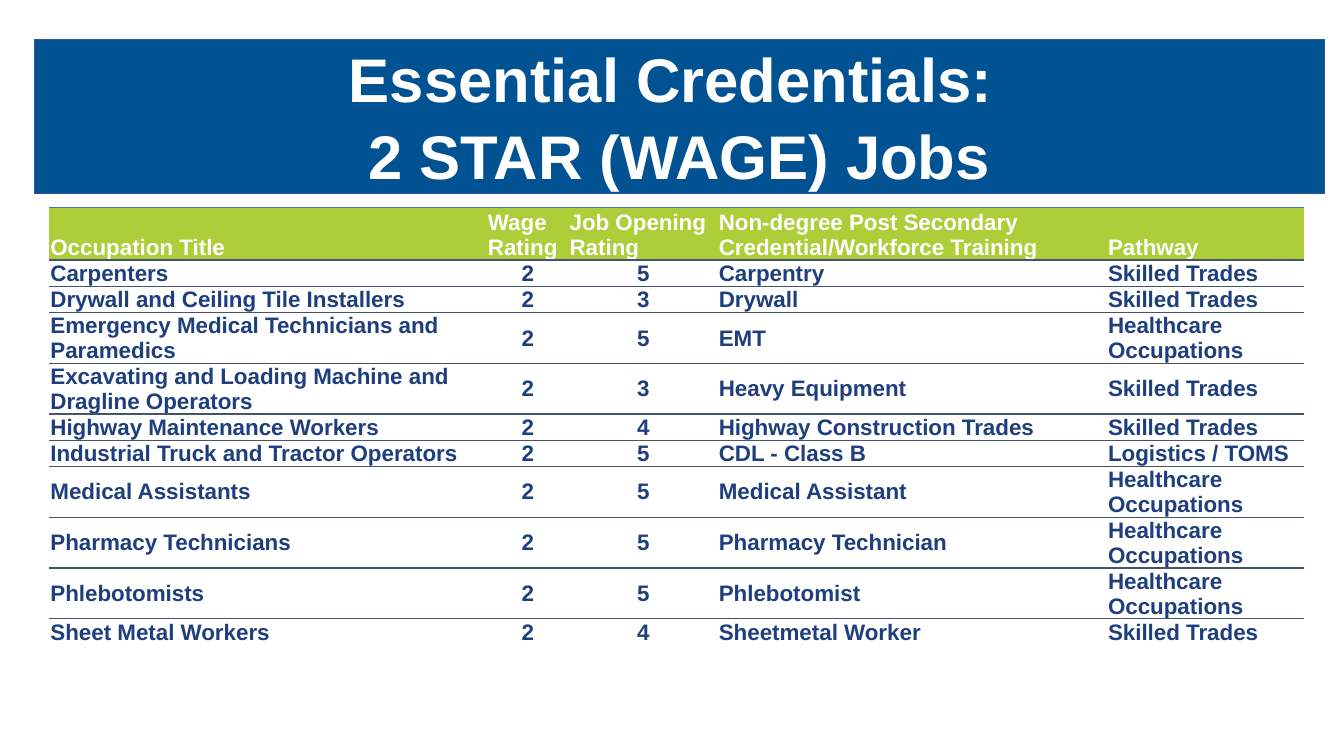
from lxml import etree
from pptx import Presentation
from pptx import util as u
from pptx.dml.color import RGBColor
from pptx.enum import shapes, text
from pptx.oxml import ns

WHITE, BLUE, NAVY, GREEN = "FFFFFF", "005293", "1E3E7D", "ADCD39"
RULE, TOP_RULE = ("44546A", 1), ("4472C4", 0.5)
ONE_LINE, TWO_LINES = 0.26, 0.5

TITLE = ["Essential Credentials: ", "2 STAR (WAGE) Jobs"]
HEADER = ["Occupation Title", "Wage Rating", "Job Opening Rating",
          "Non-degree Post Secondary Credential/Workforce Training", "Pathway"]
COLUMN_WIDTHS = [4.34, 0.81, 1.48, 3.86, 1.95]
RATING_COLUMNS = (1, 2)
TRADES, HEALTH = "Skilled Trades", "Healthcare Occupations"
JOBS = [
    ("Carpenters", "2", "5", "Carpentry", TRADES),
    ("Drywall and Ceiling Tile Installers", "2", "3", "Drywall", TRADES),
    ("Emergency Medical Technicians and Paramedics", "2", "5", "EMT", HEALTH),
    ("Excavating and Loading Machine and Dragline Operators", "2", "3",
     "Heavy Equipment", TRADES),
    ("Highway Maintenance Workers", "2", "4", "Highway Construction Trades", TRADES),
    ("Industrial Truck and Tractor Operators", "2", "5", "CDL - Class B",
     "Logistics / TOMS"),
    ("Medical Assistants", "2", "5", "Medical Assistant", HEALTH),
    ("Pharmacy Technicians", "2", "5", "Pharmacy Technician", HEALTH),
    ("Phlebotomists", "2", "5", "Phlebotomist", HEALTH),
    ("Sheet Metal Workers", "2", "4", "Sheetmetal Worker", TRADES),
]


def color(value):
    return RGBColor.from_string(value)


def add_run(p, words, size, font_color):
    r = p.add_run()
    r.text = words
    r.font.name = "Arial"
    r.font.size = u.Pt(size)
    r.font.bold = True
    r.font.color.rgb = color(font_color)


def add_banner(s, lines, left, top, width, height):
    sp = s.shapes.add_shape(shapes.MSO_SHAPE.RECTANGLE, u.Inches(left),
                            u.Inches(top), u.Inches(width), u.Inches(height))
    sp.shadow.inherit = False
    sp.fill.solid()
    sp.fill.fore_color.rgb = color(BLUE)
    sp.line.color.rgb = color("325491")
    sp.line.width = u.Pt(1)
    tf = sp.text_frame
    tf.word_wrap = True
    tf.vertical_anchor = text.MSO_ANCHOR.MIDDLE
    for i, line in enumerate(lines):
        p = tf.add_paragraph() if i else tf.paragraphs[0]
        p.alignment = text.PP_ALIGN.CENTER
        p.space_before = u.Pt(2.4)
        add_run(p, line, 44, WHITE)


def set_borders(cell, top, bottom):
    # Borders come before the fill in the cell properties
    tc_pr = cell._tc.get_or_add_tcPr()
    edges = [("lnL", None), ("lnR", None), ("lnT", top), ("lnB", bottom)]
    for i, (tag, rule) in enumerate(edges):
        ln = etree.Element(ns.qn("a:" + tag))
        if rule:
            ln.set("w", str(u.Pt(rule[1])))
            fill = etree.SubElement(ln, ns.qn("a:solidFill"))
            etree.SubElement(fill, ns.qn("a:srgbClr"), val=rule[0])
        else:
            etree.SubElement(ln, ns.qn("a:noFill"))
        tc_pr.insert(i, ln)


def fill_cell(cell, words, is_header, centered):
    cell.margin_left = cell.margin_right = cell.margin_top = u.Inches(0.01)
    cell.margin_bottom = 0
    anchors = text.MSO_ANCHOR
    cell.vertical_anchor = anchors.BOTTOM if is_header else anchors.MIDDLE
    if is_header:
        cell.fill.solid()
        cell.fill.fore_color.rgb = color(GREEN)
    else:
        cell.fill.background()
    p = cell.text_frame.paragraphs[0]
    p.alignment = text.PP_ALIGN.CENTER if centered else text.PP_ALIGN.LEFT
    add_run(p, words, 16, WHITE if is_header else NAVY)


def add_jobs_table(s, left, top):
    rows = [HEADER, *JOBS]
    # Long occupations and the healthcare pathway wrap to a second line
    heights = [0.52] + [TWO_LINES if job[4] == HEALTH or len(job[0]) > 40
                        else ONE_LINE for job in JOBS]
    table = s.shapes.add_table(
        len(rows), len(HEADER), u.Inches(left), u.Inches(top),
        u.Inches(sum(COLUMN_WIDTHS)), u.Inches(sum(heights))).table
    table.horz_banding = False
    for column, width in zip(table.columns, COLUMN_WIDTHS):
        column.width = u.Inches(width)
    for i, (row, height) in enumerate(zip(rows, heights)):
        table.rows[i].height = u.Inches(height)
        for j, words in enumerate(row):
            cell = table.cell(i, j)
            fill_cell(cell, words, i == 0, i > 0 and j in RATING_COLUMNS)
            set_borders(cell, RULE if i else TOP_RULE,
                        RULE if i < len(JOBS) else None)


def main():
    prs = Presentation()
    prs.slide_width, prs.slide_height = u.Inches(13.33), u.Inches(7.5)
    s = prs.slides.add_slide(prs.slide_layouts[6])
    # Title banner
    add_banner(s, TITLE, 0.34, 0.39, 12.8, 1.53)
    # Occupations
    add_jobs_table(s, 0.49, 2.06)
    prs.save("out.pptx")


if __name__ == "__main__":
    main()
